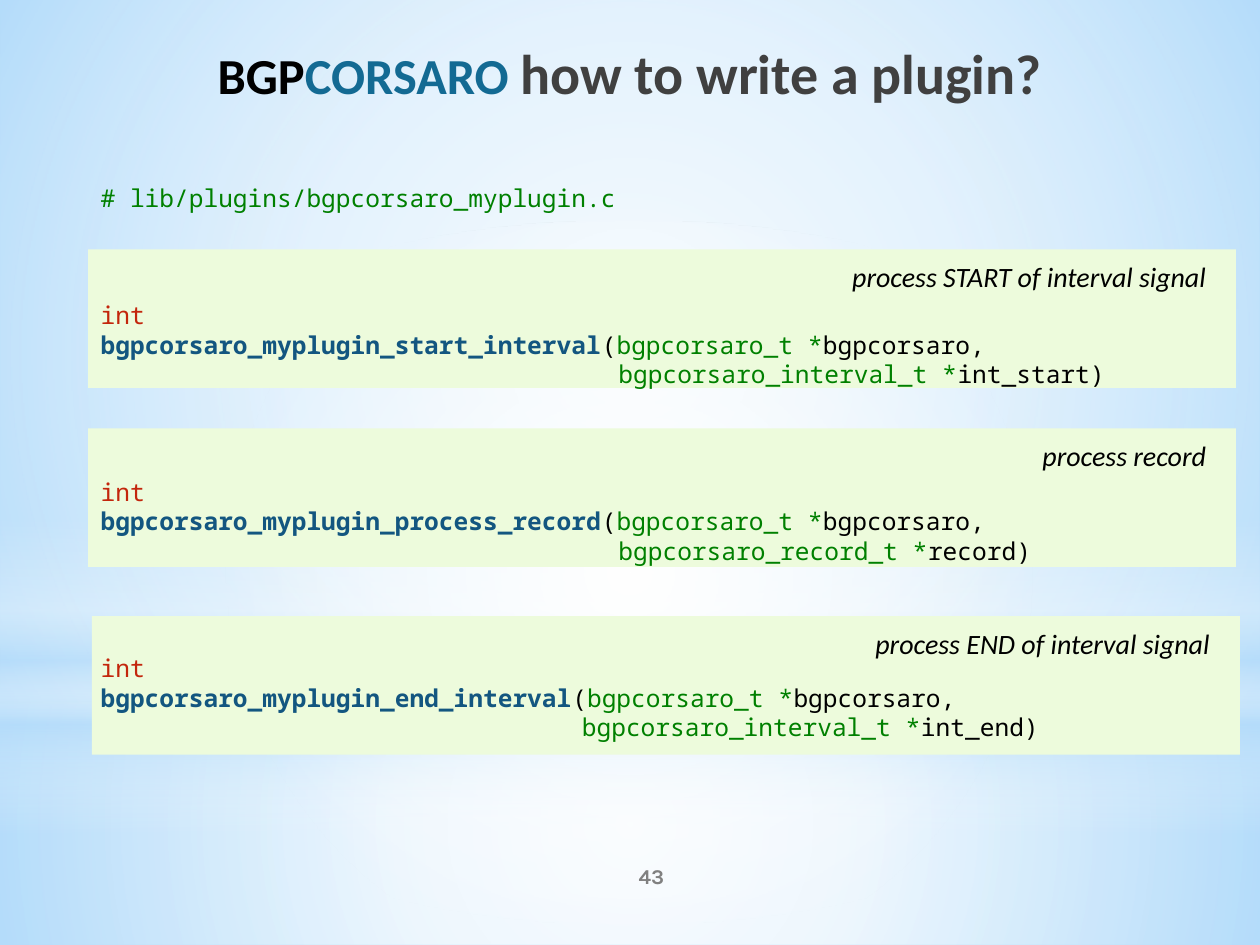
"""Build the slide on how to write a BGPCORSARO plugin."""
from dataclasses import dataclass

from pptx import Presentation, oxml
from pptx import util as u
from pptx.dml.color import RGBColor
from pptx.enum import shapes, text
from pptx.oxml import ns


@dataclass(frozen=True)
class Theme:
    """Colours, fonts and type sizes."""
    sky: str = "B4DCFA"
    white: str = "FFFFFF"
    band: str = "EDFBDC"
    black: str = "000000"
    dark: str = "404040"
    grey: str = "808080"
    teal: str = "136A93"
    navy: str = "135680"
    red: str = "C3260C"
    green: str = "008000"
    sans: str = "Calibri"
    mono: str = "Noto Sans Mono"
    page: str = "Karla"
    big: int = 36
    head: int = 32
    note: int = 16
    code: int = 14
    small: int = 12
    lead: float = 16.8


T = Theme()
RADIAL = ('<a:path path="circle"><a:fillToRect l="50000" t="50000" '
          'r="50000" b="50000"/></a:path>')
LINEAR = '<a:lin ang="5400000" scaled="0"/>'
GLOWS = [
    ("RECTANGLE", (0, 5.58, 10, 1.92), RADIAL,
     [(0, T.white, 91), (37, T.white, 76), (100, T.sky, 79)]),
    ("RECTANGLE", (0, 0, 10, 5.58), RADIAL,
     [(0, T.white, 89), (48, T.white, 62), (100, T.sky, 79)]),
    ("RECTANGLE", (0, 4.12, 10, 2.5), LINEAR,
     [(0, T.white, 0), (29, T.white, 30), (45, T.sky, 40),
      (55, T.white, 26), (65, T.sky, 60), (100, T.white, 0)]),
    ("OVAL", (0, 1.75, 10, 5.58), RADIAL,
     [(0, T.white, 100), (56, T.white, 0)]),
]
BANDS = [
    (0.7, 1.98, "process START of interval signal"),
    (0.7, 3.4, "process record"),
    (0.73, 4.89, "process END of interval signal"),
]
CALLS = [
    ("start_interval", "interval", "int_start", 4.11),
    ("process_record", "record", "record", 4.11),
    ("end_interval", "interval", "int_end", 3.82),
]


def place(box):
    """Turn a box in inches into lengths."""
    return [u.Inches(n) for n in box]


def add_run(para, words, hue, **form):
    """Add a run with a colour and font values."""
    run = para.add_run()
    run.text = words
    run.font.color.rgb = RGBColor.from_string(hue)
    for key, val in form.items():
        setattr(run.font, key, u.Pt(val) if key == "size" else val)
    return run


def add_shape(slide, kind, box):
    """Add a preset shape without line or shadow."""
    shape = slide.shapes.add_shape(
        getattr(shapes.MSO_SHAPE, kind), *place(box))
    shape.shadow.inherit = False
    shape.line.fill.background()
    return shape


def add_glow(slide, kind, box, course, stops):
    """Add a shape with a see-through gradient."""
    shape = add_shape(slide, kind, box)
    shape.fill.background()
    marks = "".join(
        f'<a:gs pos="{pos * 1000}"><a:srgbClr val="{hue}">'
        f'<a:alpha val="{alpha * 1000}"/></a:srgbClr></a:gs>'
        for pos, hue, alpha in stops)
    grad = oxml.parse_xml(
        f'<a:gradFill {ns.nsdecls("a")} rotWithShape="1">'
        f'<a:gsLst>{marks}</a:gsLst>{course}</a:gradFill>')
    props = shape._element.spPr
    props.replace(props.find(ns.qn("a:noFill")), grad)


def add_text(slide, box, align="LEFT", anchor="TOP"):
    """Add a wrapping text box and return its frame."""
    frame = slide.shapes.add_textbox(*place(box)).text_frame
    frame.word_wrap = True
    frame.vertical_anchor = getattr(text.MSO_ANCHOR, anchor)
    frame.paragraphs[0].alignment = getattr(text.PP_ALIGN, align)
    return frame


def add_band(slide, left, top, note):
    """Add a pale band with a note at its top right."""
    band = add_shape(slide, "RECTANGLE", (left, top, 9.11, 1.1))
    band.fill.solid()
    band.fill.fore_color.rgb = RGBColor.from_string(T.band)
    frame = add_text(slide, (left + 5.25, top + 0.03, 3.72, 0.37), "RIGHT")
    add_run(frame.paragraphs[0], note, T.black,
            size=T.note, name=T.sans, italic=True)


def add_line(frame, runs, gap=0, indent=0):
    """Add a line of code made of coloured runs."""
    para = frame.paragraphs[0]
    if para.runs:
        para = frame.add_paragraph()
        para.space_before = u.Pt(gap)
    para.line_spacing = u.Pt(T.lead)
    if indent:
        para._p.get_or_add_pPr().set("marL", str(u.Inches(indent)))
    for words, hue, bold in runs:
        add_run(para, words, hue, size=T.code, name=T.mono, bold=bold)


def add_code(slide):
    """Add the listing of plugin functions."""
    frame = add_text(slide, (0.7, 1.4, 8.25, 4.81))
    add_line(frame, [("# lib/plugins/bgpcorsaro_myplugin.c", T.green, False)])
    for func, kind, arg, indent in CALLS:
        add_line(frame, [("int", T.red, False)], gap=3 * T.lead)
        add_line(frame, [
            (f"bgpcorsaro_myplugin_{func}", T.navy, True),
            ("(", T.black, False),
            ("bgpcorsaro_t *", T.green, False),
            ("bgpcorsaro,", T.black, False)])
        add_line(frame, [
            (f"bgpcorsaro_{kind}_t *", T.green, False),
            (f"{arg})", T.black, False)], indent=indent)


def set_title(slide):
    """Format the title and bring it to the front."""
    title = slide.shapes.title
    spot = zip(("left", "top", "width", "height"), place((0.5, 0.2, 9, 0.58)))
    for key, val in spot:
        setattr(title, key, val)
    frame = title.text_frame
    frame.auto_size = text.MSO_AUTO_SIZE.NONE
    frame.vertical_anchor = text.MSO_ANCHOR.TOP
    para = frame.paragraphs[0]
    para.alignment = text.PP_ALIGN.CENTER
    form = {"name": T.sans, "bold": True}
    for words, hue in (("bgp", T.black), ("corsaro ", T.teal)):
        run = add_run(para, words, hue, size=T.big, **form)
        run._r.get_or_add_rPr().set("cap", "small")
    add_run(para, "how to write a plugin?", T.dark, size=T.head, **form)
    slide.shapes._spTree.append(title._element)


def main():
    """Build and save the slide."""
    deck = Presentation()
    deck.slide_width, deck.slide_height = u.Inches(10), u.Inches(7.5)
    slide = deck.slides.add_slide(deck.slide_layouts[5])
    slide.background.fill.solid()
    slide.background.fill.fore_color.rgb = RGBColor.from_string(T.sky)
    for glow in GLOWS:
        add_glow(slide, *glow)
    for band in BANDS:
        add_band(slide, *band)
    set_title(slide)
    add_code(slide)
    page = add_text(slide, (4.17, 6.75, 2, 0.4), "CENTER", "MIDDLE")
    add_run(page.paragraphs[0], "43", T.grey,
            size=T.small, name=T.page, bold=True)
    deck.save("out.pptx")


if __name__ == "__main__":
    main()
